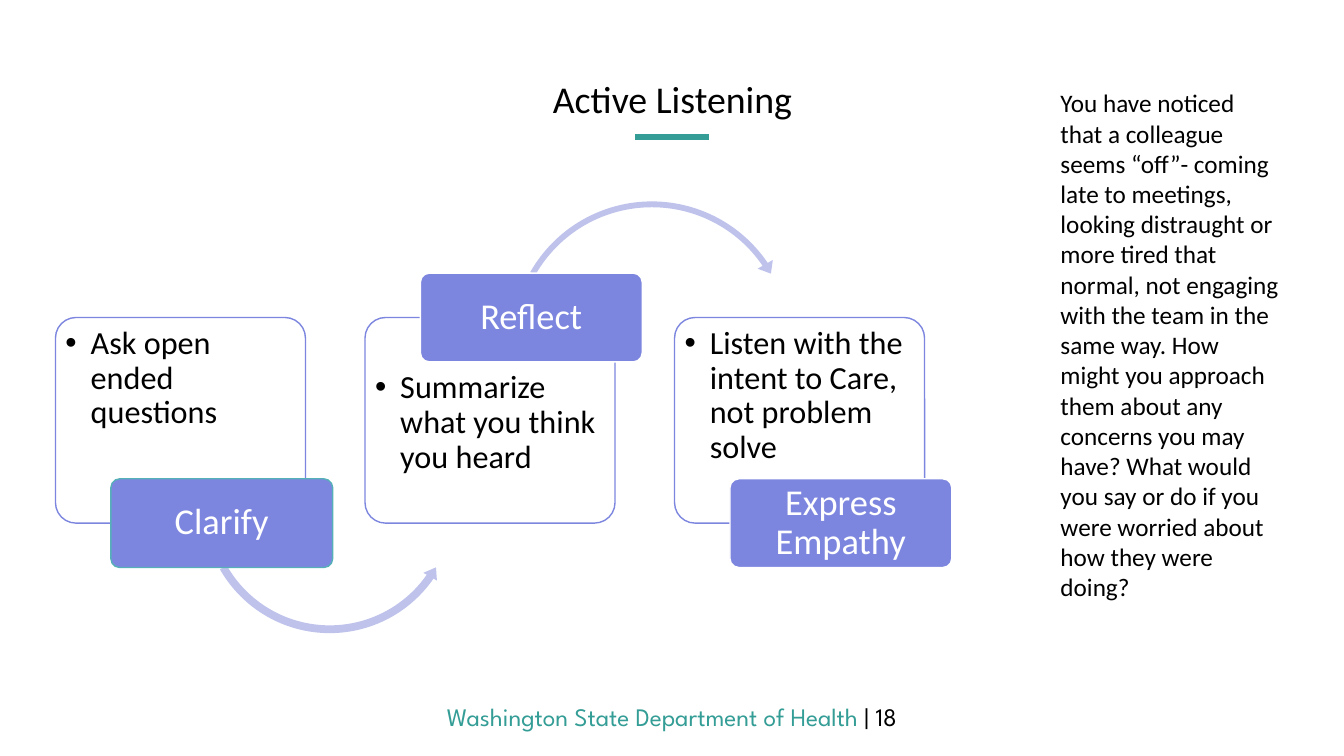
"""Build the Active Listening slide: three linked steps beside a discussion scenario."""
from dataclasses import dataclass

from lxml import etree
from pptx import Presentation
from pptx import util as u
from pptx.dml.color import RGBColor
from pptx.enum import shapes, text
from pptx.oxml import ns


@dataclass(frozen=True)
class Theme:
    black: RGBColor = RGBColor.from_string("000000")
    white: RGBColor = RGBColor.from_string("FFFFFF")
    teal: RGBColor = RGBColor.from_string("349D96")
    purple: RGBColor = RGBColor.from_string("7D86DF")
    lavender: RGBColor = RGBColor.from_string("BFC3EC")
    aqua: RGBColor = RGBColor.from_string("55B0B8")
    body_font: str = "Calibri"
    footer_font: str = "League Spartan"
    title_size: int = 27
    step_size: int = 26
    bullet_size: int = 23
    note_size: int = 18


class SlideBuilder:
    def __init__(self, slide, theme):
        self.slide = slide
        self.theme = theme

    def place(self, shape, box):
        shape.left, shape.top, shape.width, shape.height = map(u.Inches, box)

    def style_font(self, font, size, color, name=None):
        font.name = name or self.theme.body_font
        font.size = u.Pt(size)
        font.color.rgb = color

    def set_insets(self, frame, left, top, right, bottom):
        frame.margin_left, frame.margin_top = u.Inches(left), u.Inches(top)
        frame.margin_right, frame.margin_bottom = u.Inches(right), u.Inches(bottom)

    def title(self, words, box):
        shape = self.slide.shapes.title
        self.place(shape, box)
        frame = shape.text_frame
        frame.text = words
        frame.auto_size = text.MSO_AUTO_SIZE.NONE
        frame.vertical_anchor = text.MSO_ANCHOR.MIDDLE
        paragraph = frame.paragraphs[0]
        paragraph.alignment = text.PP_ALIGN.CENTER
        paragraph.line_spacing = 0.9
        self.style_font(paragraph.font, self.theme.title_size, self.theme.black)

    def rule(self, left, right, y):
        ends = map(u.Inches, (left, y, right, y))
        line = self.slide.shapes.add_connector(shapes.MSO_CONNECTOR.STRAIGHT, *ends)
        line.line.color.rgb = self.theme.teal
        line.line.width = u.Pt(4)
        etree.SubElement(line._element.spPr, ns.qn("a:effectLst"))

    def text_box(self, box):
        shape = self.slide.shapes.add_textbox(*map(u.Inches, box))
        shape.text_frame.word_wrap = True
        shape.text_frame.auto_size = text.MSO_AUTO_SIZE.SHAPE_TO_FIT_TEXT
        return shape.text_frame

    def scenario(self, words, box):
        frame = self.text_box(box)
        frame.text = words
        self.style_font(frame.paragraphs[0].font, self.theme.note_size, self.theme.black)

    def footer(self, department, page, box):
        paragraph = self.text_box(box).paragraphs[0]
        paragraph.alignment = text.PP_ALIGN.CENTER
        for words, color in ((department, self.theme.teal), (page, self.theme.black)):
            run = paragraph.add_run()
            run.text = words
            self.style_font(run.font, self.theme.note_size, color, self.theme.footer_font)

    def shape(self, kind, box, fill, line=None, adjustments=(0.1,)):
        shape = self.slide.shapes.add_shape(kind, *map(u.Inches, box))
        shape.shadow.inherit = False
        for index, value in enumerate(adjustments):
            shape.adjustments[index] = value
        shape.fill.solid()
        shape.fill.fore_color.rgb = fill
        if line is None:
            shape.line.fill.background()
        else:
            shape.line.color.rgb = line
            shape.line.width = u.Pt(1)
        return shape

    def card(self, words, box, top_inset):
        shape = self.shape(shapes.MSO_SHAPE.ROUNDED_RECTANGLE, box,
                           self.theme.white, self.theme.purple)
        color = shape._element.spPr.find(ns.qn("a:solidFill"))[0]
        etree.SubElement(color, ns.qn("a:alpha"), val="90000")
        frame = shape.text_frame
        frame.text = words
        frame.word_wrap = True
        frame.vertical_anchor = text.MSO_ANCHOR.TOP
        self.set_insets(frame, 0.04, top_inset, 0.04, 0.03)
        paragraph = frame.paragraphs[0]
        paragraph.alignment = text.PP_ALIGN.LEFT
        paragraph.line_spacing = 0.9
        properties = paragraph._p.get_or_add_pPr()
        properties.set("marL", str(u.Inches(0.25)))
        properties.set("indent", str(u.Inches(-0.25)))
        etree.SubElement(properties, ns.qn("a:buFont"), typeface="Arial")
        etree.SubElement(properties, ns.qn("a:buChar"), char="•")
        self.style_font(paragraph.font, self.theme.bullet_size, self.theme.black)

    def step(self, words, box, line):
        shape = self.shape(shapes.MSO_SHAPE.ROUNDED_RECTANGLE, box, self.theme.purple, line)
        frame = shape.text_frame
        frame.text = words
        frame.word_wrap = True
        frame.vertical_anchor = text.MSO_ANCHOR.MIDDLE
        self.set_insets(frame, 0.05, 0.04, 0.05, 0.04)
        paragraph = frame.paragraphs[0]
        paragraph.alignment = text.PP_ALIGN.CENTER
        paragraph.line_spacing = 0.9
        self.style_font(paragraph.font, self.theme.step_size, self.theme.white)

    def arrow(self, kind, left, top, size, adjustments):
        self.shape(kind, (left, top, size, size), self.theme.lavender, adjustments=adjustments)


def main():
    presentation = Presentation()
    presentation.slide_width = u.Inches(13.33)
    presentation.slide_height = u.Inches(7.5)
    slide = presentation.slides.add_slide(presentation.slide_layouts[5])
    theme = Theme()
    builder = SlideBuilder(slide, theme)

    builder.rule(6.3, 7.03, 1.36)
    builder.footer("Washington State Department of Health ", "| 18", (0, 6.91, 13.33, 0.4))
    builder.title("Active Listening", (0.01, 0.74, 13.32, 0.53))

    low, high = (4.75, 0.03), (2.71, 0.47)
    steps = (
        ("Clarify", "Ask open ended questions", low, theme.aqua,
         (shapes.MSO_SHAPE.LEFT_CIRCULAR_ARROW, 1.98, 3.74, 2.58,
          (0.03, 3.09, 20.85, 90.25, 0.03))),
        ("Reflect", "Summarize what you think you heard", high, theme.white,
         (shapes.MSO_SHAPE.CIRCULAR_ARROW, 5.02, 1.94, 2.89,
          (0.02, 2.74, 195.51, 125.76, 0.03))),
        ("Express Empathy", "Listen with the intent to Care, not problem solve",
         low, theme.white, None),
    )
    for index, (name, advice, (step_top, top_inset), outline, arrow) in enumerate(steps):
        left = 0.55 + 3.07 * index
        builder.card(advice, (left, 3.15, 2.48, 2.04), top_inset)
        if arrow:
            builder.arrow(*arrow)
        builder.step(name, (left + 0.55, step_top, 2.2, 0.88), outline)

    builder.scenario(
        "You have noticed that a colleague seems “off”- coming late to meetings, "
        "looking distraught or more tired that normal, not engaging with the team "
        "in the same way. How might you approach them about any concerns you may "
        "have? What would you say or do if you were worried about how they were doing?",
        (10.42, 0.82, 2.36, 5.86))
    presentation.save("out.pptx")


if __name__ == "__main__":
    main()
